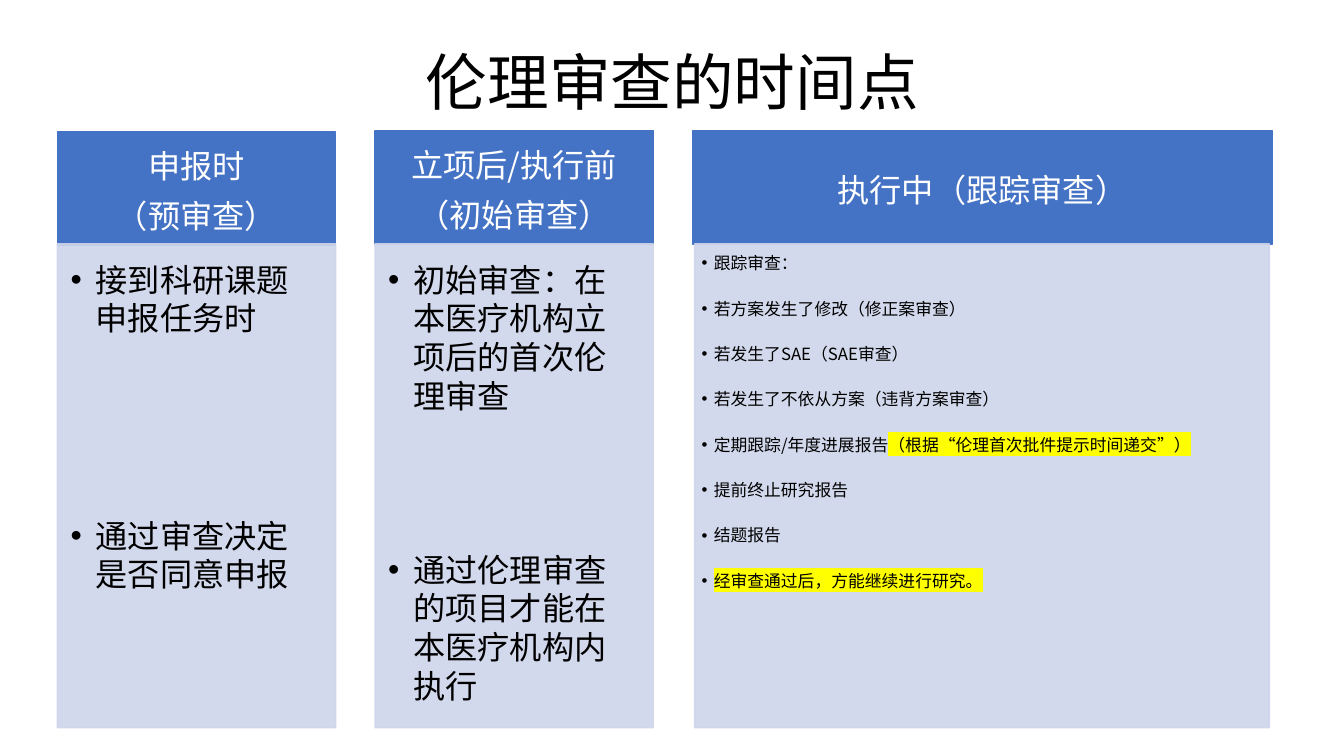
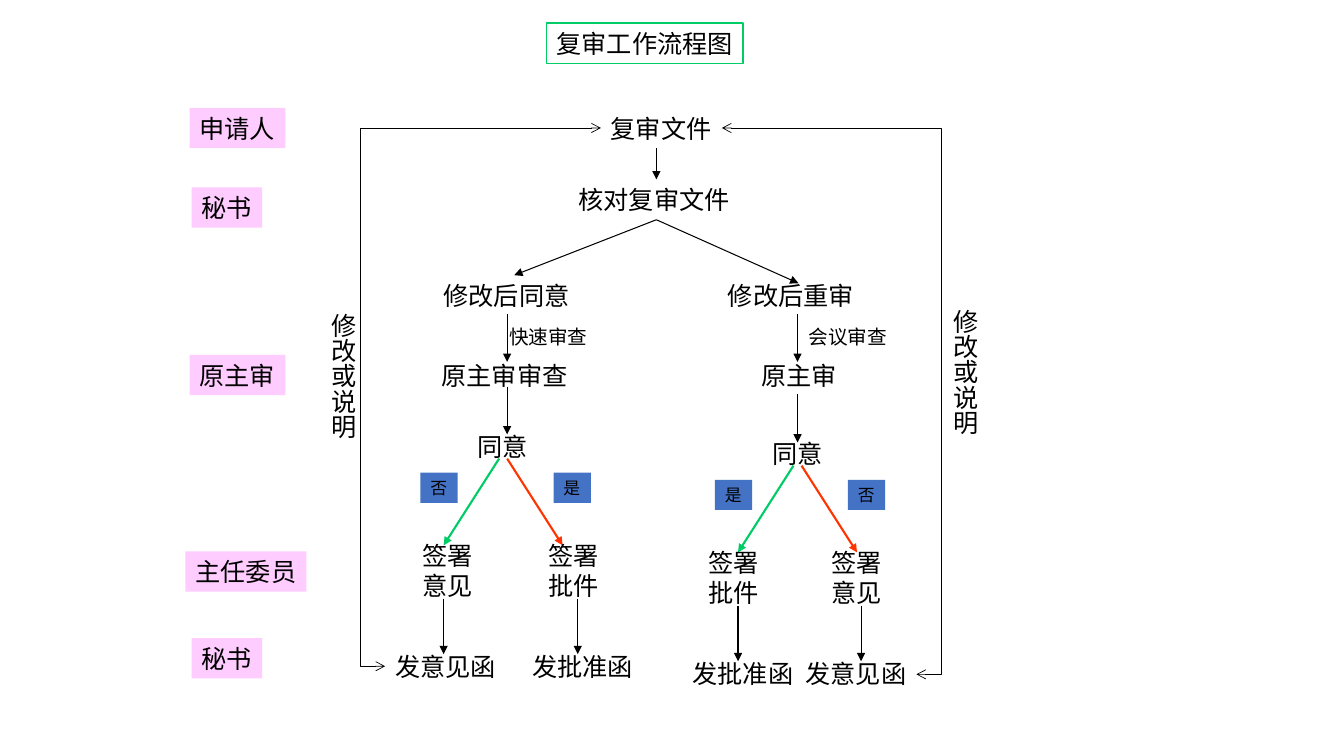
from lxml import etree
from pptx import Presentation
from pptx import util as u
from pptx.dml import color
from pptx.enum import shapes, text
from pptx.oxml import ns

PX = 9144
COLOURS = {
    "black": "000000", "white": "FFFFFF", "blue": "4472C4", "pale": "CFD5EA",
    "pink": "FFCCFF", "green": "00CC66", "red": "FF3300", "yellow": "FFFF00",
}
CJK, LATIN = "Noto Sans CJK SC", "Arial"
LEFT, CENTER = text.PP_ALIGN.LEFT, text.PP_ALIGN.CENTER
TOP, MIDDLE = text.MSO_ANCHOR.TOP, text.MSO_ANCHOR.MIDDLE
STRAIGHT, ELBOW = shapes.MSO_CONNECTOR.STRAIGHT, shapes.MSO_CONNECTOR.ELBOW


def rgb(name):
    return color.RGBColor.from_string(COLOURS[name])


def element(parent, tag, **attributes):
    return etree.SubElement(parent, ns.qn(tag), attributes)


class Deck:
    def __init__(self, width, height):
        self.presentation = Presentation()
        self.presentation.slide_width = width * PX
        self.presentation.slide_height = height * PX
        self.slide = None

    def new_slide(self):
        self.slide = self.presentation.slides.add_slide(self.presentation.slide_layouts[6])

    def rectangle(self, box, fill=None, line=None, opacity=None):
        shape = self.slide.shapes.add_shape(
            shapes.MSO_SHAPE.RECTANGLE, *(value * PX for value in box))
        shape.shadow.inherit = False
        for format_, name in ((shape.fill, fill), (shape.line.fill, line)):
            if name:
                format_.solid()
                format_.fore_color.rgb = rgb(name)
            else:
                format_.background()
        if line:
            shape.line.width = u.Pt(1)
        if opacity:
            for node in shape._element.spPr.iter(ns.qn("a:srgbClr")):
                element(node, "a:alpha", val=str(opacity * 1000))
        return shape

    def textbox(self, box):
        return self.slide.shapes.add_textbox(*(value * PX for value in box))

    def frame(self, shape, anchor, insets=(10, 5, 10, 5), wrap=True):
        frame = shape.text_frame
        frame.word_wrap = wrap
        frame.vertical_anchor = anchor
        (frame.margin_left, frame.margin_top,
         frame.margin_right, frame.margin_bottom) = (value * PX for value in insets)
        return frame

    def style(self, paragraph, size, font, colour="black", align=LEFT):
        paragraph.alignment = align
        for run in paragraph.runs:
            run.font.size = u.Pt(size)
            run.font.color.rgb = rgb(colour)
            run.font.name = font
            element(run.font._element, "a:ea", typeface=font)

    def highlight(self, run):
        mark = etree.Element(ns.qn("a:highlight"))
        element(mark, "a:srgbClr", val=COLOURS["yellow"])
        run.font._element.find(ns.qn("a:latin")).addprevious(mark)

    def title(self, words, box):
        frame = self.frame(self.textbox(box), MIDDLE)
        frame.text = words
        paragraph = frame.paragraphs[0]
        paragraph.line_spacing = 0.9
        self.style(paragraph, 44, CJK, align=CENTER)

    def header(self, words, box):
        size = 23
        frame = self.frame(self.rectangle(box, "blue", "blue"), MIDDLE, (18, 15, 18, 10))
        frame.text = words
        for index, paragraph in enumerate(frame.paragraphs):
            paragraph.line_spacing = u.Pt(size * 1.2)
            paragraph.space_before = u.Pt(size * 0.35 if index else 0)
            self.style(paragraph, size, CJK, "white", CENTER)

    def bullets(self, items, box, size, indent, insets, blanks):
        shape = self.rectangle(box, "pale", "pale", opacity=90)
        frame = self.frame(shape, TOP, insets)
        for index, (plain, marked) in enumerate(items):
            paragraph = frame.add_paragraph() if index else frame.paragraphs[0]
            for words in (plain, marked):
                if words:
                    paragraph.add_run().text = words
            self.style(paragraph, size, CJK)
            if marked:
                self.highlight(paragraph.runs[-1])
            paragraph.line_spacing = u.Pt(size * 1.2)
            paragraph.space_before = u.Pt(size * (blanks * 1.35 + 0.15) if index else 0)
            properties = paragraph._p.get_or_add_pPr()
            properties.set("marL", str(indent * PX))
            properties.set("indent", str(-indent * PX))
            element(properties, "a:buFont", typeface=LATIN)
            element(properties, "a:buChar", char="•")

    def label(self, words, left, top, size=18, fill=None, line=None, vertical=False):
        lines = words.split("\n")
        length = round(max(map(len, lines)) * size / 0.72)
        depth = round(len(lines) * size / 0.6)
        box = (left, top, depth + 20, length + 10) if vertical else (
            left, top, length + 20, depth + 10)
        shape = self.rectangle(box, fill, line) if fill or line else self.textbox(box)
        frame = self.frame(shape, MIDDLE, wrap=False)
        frame.text = words
        if vertical:
            frame._txBody.bodyPr.set("vert", "eaVert")
        for paragraph in frame.paragraphs:
            self.style(paragraph, size, LATIN)

    def connector(self, kind, start, end, colour, width, **ends):
        connector = self.slide.shapes.add_connector(
            kind, *(value * PX for value in (*start, *end)))
        connector.line.color.rgb = rgb(colour)
        connector.line.width = u.Pt(width)
        for tag, head in ends.items():
            element(connector.line._get_or_add_ln(), "a:" + tag, type=head)
        element(connector._element.spPr, "a:effectLst")
        return connector

    def arrow(self, start, end, colour="black", width=0.75):
        self.connector(STRAIGHT, start, end, colour, width, tailEnd="triangle")

    def loop(self, start, end, reach):
        connector = self.connector(
            ELBOW, start, end, "black", 0.5, headEnd="arrow", tailEnd="arrow")
        geometry = connector._element.spPr.find(ns.qn("a:prstGeom"))
        guides = geometry.find(ns.qn("a:avLst"))
        if guides is None:
            guides = element(geometry, "a:avLst")
        ratio = round(-reach / abs(end[0] - start[0]) * 100000)
        element(guides, "a:gd", name="adj1", fmla=f"val {ratio}")

    def decision(self, x, y, outcomes):
        self.label("同意", x - 35, y - 32)
        for side, colour, outcome in zip((-1, 1), ("green", "red"), outcomes):
            answer, signature, sign_left, stem, letter, letter_left = outcome
            self.arrow((x + side * 4, y), (x + side * 59, y + 86), colour, 1.5)
            self.label(answer, x - 16 + side * 66, y + 14, 12, "blue")
            self.label(signature, sign_left, y + 76)
            self.arrow((stem, y + 139), (stem, y + 194))
            self.label(letter, letter_left, y + 186)


def timing_slide(deck):
    deck.new_slide()
    deck.title("伦理审查的时间点", (92, 12, 1150, 145))
    large = dict(size=23, indent=25, insets=(13, 16, 18, 20))
    small = dict(size=12, indent=12, insets=(7, 9, 9, 10))
    columns = [
        ("申报时\n（预审查）", (57, 131, 276, 112), (57, 242, 276, 480), large, 4,
         [("接到科研课题申报任务时", ""), ("通过审查决定是否同意申报", "")]),
        ("立项后/执行前\n（初始审查）", (372, 130, 276, 112), (372, 242, 276, 480), large, 3,
         [("初始审查：在本医疗机构立项后的首次伦理审查", ""),
          ("通过伦理审查的项目才能在本医疗机构内执行", "")]),
        ("执行中（跟踪审查）", (687, 130, 575, 112), (689, 242, 570, 480), small, 1,
         [("跟踪审查：", ""),
          ("若方案发生了修改（修正案审查）", ""),
          ("若发生了SAE（SAE审查）", ""),
          ("若发生了不依从方案（违背方案审查）", ""),
          ("定期跟踪/年度进展报告", "（根据“伦理首次批件提示时间递交”）"),
          ("提前终止研究报告", ""),
          ("结题报告", ""),
          ("", "经审查通过后，方能继续进行研究。")]),
    ]
    for heading, head_box, body_box, look, blanks, items in columns:
        deck.header(heading, head_box)
        deck.bullets(items, body_box, blanks=blanks, **look)


def flow_slide(deck):
    deck.new_slide()
    deck.label("复审工作流程图", 542, 23, line="green")
    for role, left, top in [("申请人", 188, 107), ("秘书", 190, 186), ("原主审", 188, 352),
                            ("主任委员", 184, 547), ("秘书", 190, 633)]:
        deck.label(role, left, top, fill="pink")
    for step, left, top in [("复审文件", 596, 107), ("核对复审文件", 564, 178),
                            ("修改后同意", 430, 273), ("修改后重审", 712, 273),
                            ("原主审审查", 428, 352), ("原主审", 745, 352)]:
        deck.label(step, left, top)
    deck.label("快速审查", 495, 318, 14)
    deck.label("会议审查", 792, 318, 14)
    for start, end in [((651, 147), (651, 178)), ((651, 218), (510, 273)),
                       ((651, 218), (792, 281)), ((503, 312), (503, 359)),
                       ((791, 312), (791, 359)), ((503, 384), (503, 431)),
                       ((791, 391), (791, 439))]:
        deck.arrow(start, end)
    opinion, approval = "签署\n意见", "签署\n批件"
    deck.decision(499, 455, [("否", opinion, 409, 440, "发意见函", 382),
                             ("是", approval, 534, 573, "发批准函", 518)])
    deck.decision(791, 462, [("是", approval, 693, 732, "发批准函", 677),
                             ("否", opinion, 815, 854, "发意见函", 789)])
    deck.loop((382, 661), (596, 127), 25)
    deck.loop((909, 669), (716, 127), 25)
    deck.label("修改或说明", 315, 301, vertical=True)
    deck.label("修改或说明", 932, 297, vertical=True)


def main():
    deck = Deck(1333, 750)
    timing_slide(deck)
    flow_slide(deck)
    deck.presentation.save("out.pptx")


if __name__ == "__main__":
    main()
